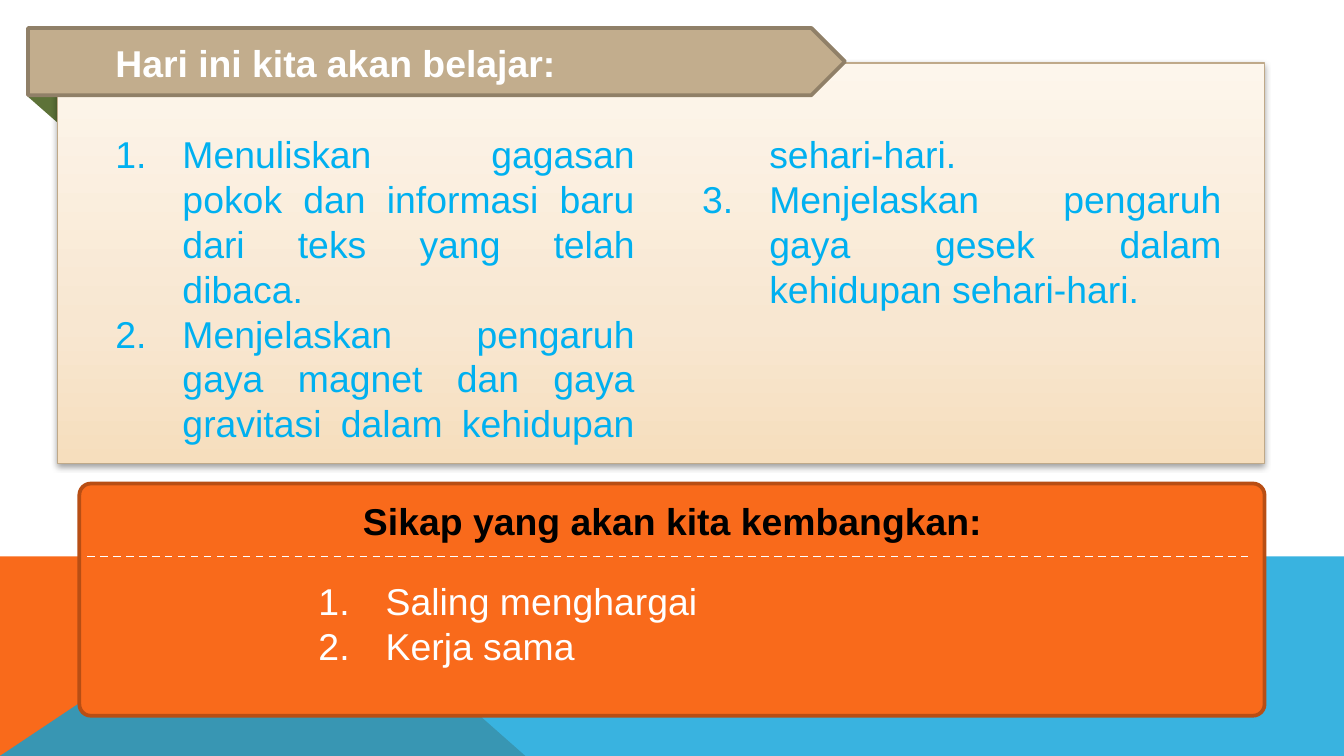
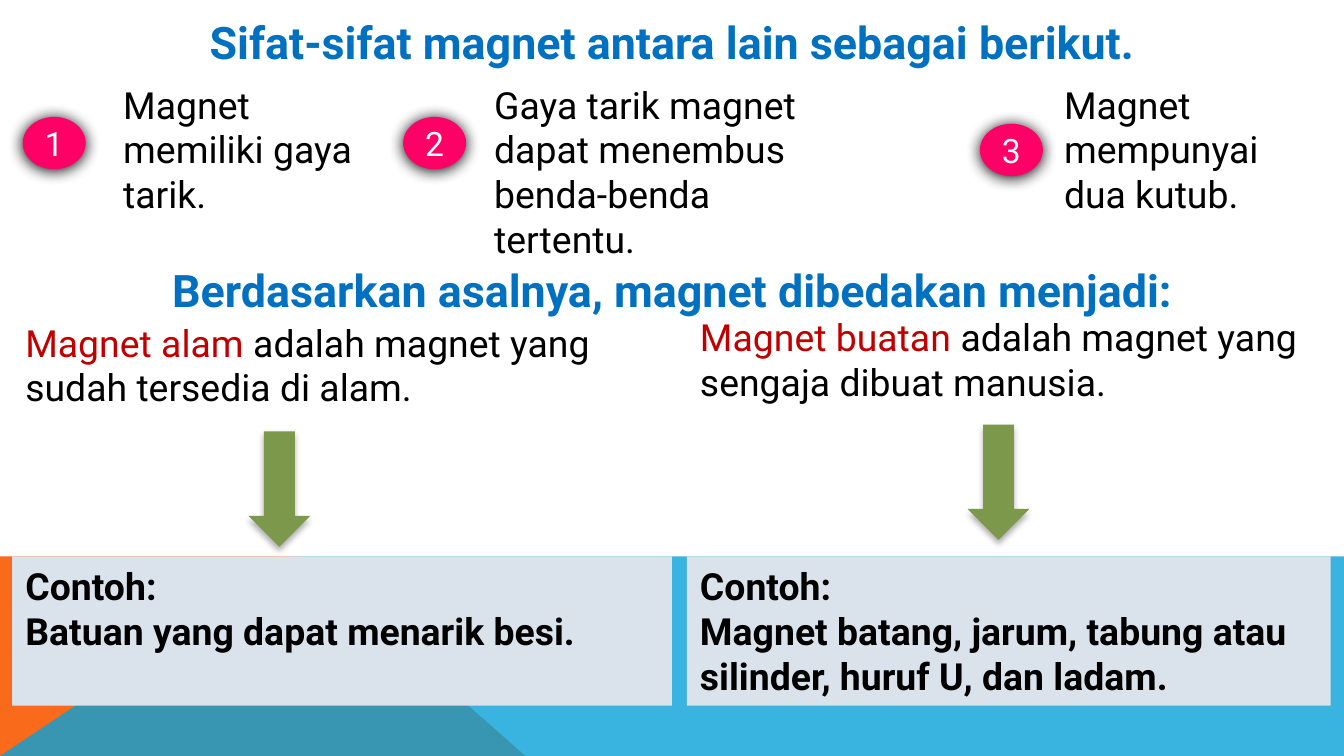
from dataclasses import dataclass
from typing import NamedTuple, Optional

from lxml import etree
from pptx import Presentation
from pptx.dml.color import RGBColor
from pptx.enum.dml import MSO_LINE
from pptx.enum.shapes import MSO_CONNECTOR, MSO_SHAPE
from pptx.enum.text import MSO_ANCHOR, MSO_AUTO_SIZE, PP_ALIGN
from pptx.oxml.ns import qn
from pptx.util import Cm, Pt

RECTANGLE, ROUNDED = MSO_SHAPE.RECTANGLE, MSO_SHAPE.ROUNDED_RECTANGLE
TRIANGLE, PENTAGON = MSO_SHAPE.ISOSCELES_TRIANGLE, MSO_SHAPE.PENTAGON
OVAL, ARROW = MSO_SHAPE.OVAL, MSO_SHAPE.RIGHT_ARROW
LEFT, CENTER, JUSTIFY = PP_ALIGN.LEFT, PP_ALIGN.CENTER, PP_ALIGN.JUSTIFY
TOP, MIDDLE = MSO_ANCHOR.TOP, MSO_ANCHOR.MIDDLE
GROW = MSO_AUTO_SIZE.SHAPE_TO_FIT_TEXT

COLORS = {
    "white": "FFFFFF", "black": "000000",
    "orange": "F96A1B", "orange edge": "B84E14", "sky": "08A1D9",
    "tan": "C2AD8D", "tan edge": "908068", "panel edge": "BFA989",
    "fold": "5D7238", "aqua": "00B0F0", "heading": "0070C0",
    "term": "C00000", "example": "DAE2EB", "badge": "FF0066", "arrow": "7C984A",
}
PANEL_STOPS = ((0, "F6DEBD"), (35, "F8E7D1"), (100, "FDF6EC"))

# Shared page measures, in centimetres
WIDTH, HEIGHT = 25.4, 14.29
BAND_TOP = 10.52
MARGIN, RIGHT_COLUMN = 0.23, 12.98


class Area(NamedTuple):
    left: float
    top: float
    width: float
    height: float


class Shadow(NamedTuple):
    opacity: int
    blur: float
    distance: float


@dataclass(frozen=True)
class TextStyle:
    font: str
    size: int
    color: str
    bold: bool = False
    align: PP_ALIGN = LEFT


@dataclass(frozen=True)
class Fact:
    number: str
    text: str
    area: Area
    badge_left: float
    badge_top: float


@dataclass(frozen=True)
class Kind:
    term: str
    meaning: str
    meaning_area: Area
    example: str
    example_area: Area
    arrow_left: float
    arrow_top: float


GOALS = TextStyle("Arial", 20, "aqua", align=JUSTIFY)
ATTITUDES = TextStyle("Arial", 20, "white")
GOALS_TITLE = TextStyle("Arial", 20, "white", True)
ATTITUDES_TITLE = TextStyle("Arial", 20, "black", True, CENTER)
HEADING = TextStyle("Roboto", 24, "heading", True, CENTER)
BODY = TextStyle("Roboto", 20, "black")
EXAMPLE = TextStyle("Roboto", 20, "black", True)
BADGE = TextStyle("Roboto", 18, "white", align=CENTER)

PANEL_SHADOW = Shadow(38, 3.1, 1.6)
BADGE_SHADOW = Shadow(100, 8.5, 1)
ARROW_SHADOW = Shadow(32, 3.5, 2.2)

FACTS = (
    Fact("1", "Magnet memiliki gaya tarik.", Area(2.08, 1.42, 5.08, 2.82), 0.43, 2.21),
    Fact("2", "Gaya tarik magnet dapat menembus benda-benda tertentu.",
         Area(9.09, 1.42, 7.39, 2.82), 7.62, 2.21),
    Fact("3", "Magnet mempunyai dua kutub.", Area(19.86, 1.42, 5.08, 2.59), 18.52, 2.34),
)
KINDS = (
    Kind("Magnet alam ", "adalah magnet yang sudah tersedia di alam.",
         Area(MARGIN, 5.92, 12.47, 1.96), "Batuan yang dapat menarik besi.",
         Area(MARGIN, BAND_TOP, 12.47, 2.82), 4.19, 8.66),
    Kind("Magnet buatan ", "adalah magnet yang sengaja dibuat manusia.",
         Area(RIGHT_COLUMN, 5.82, 11.79, 1.96),
         "Magnet batang, jarum, tabung atau silinder, huruf U, dan ladam.",
         Area(RIGHT_COLUMN, BAND_TOP, 12.17, 2.82), 17.78, 8.53),
)


def rgb(name: str) -> RGBColor:
    return RGBColor.from_string(COLORS[name])


def lengths(area: Area) -> list:
    return [Cm(value) for value in area]


def add_color(parent, value: str, opacity: int = 100) -> None:
    color = etree.SubElement(parent, qn("a:srgbClr"), val=value)
    if opacity < 100:
        etree.SubElement(color, qn("a:alpha"), val=str(opacity * 1000))


def add_shadow(shape, shadow: Shadow) -> None:
    effects = shape.element.spPr.find(qn("a:effectLst"))
    outer = etree.SubElement(
        effects, qn("a:outerShdw"), blurRad=str(Pt(shadow.blur)),
        dist=str(Pt(shadow.distance)), dir="5400000", rotWithShape="0")
    add_color(outer, COLORS["black"], shadow.opacity)


def add_box(page, kind: MSO_SHAPE, area: Area, fill: str, edge: Optional[str] = None,
            edge_width: float = 2, shadow: Optional[Shadow] = None, turn: int = 0):
    box = page.shapes.add_shape(kind, *lengths(area))
    box.rotation = turn
    box.shadow.inherit = False
    box.fill.solid()
    box.fill.fore_color.rgb = rgb(fill)
    if edge:
        box.line.color.rgb = rgb(edge)
        box.line.width = Pt(edge_width)
    else:
        box.line.fill.background()
    if shadow:
        add_shadow(box, shadow)
    return box


def style_span(span, style: TextStyle, color: str) -> None:
    span.font.name = style.font
    span.font.size = Pt(style.size)
    span.font.bold = style.bold
    span.font.color.rgb = rgb(color)


def write(box, lines: list[str], style: TextStyle, numbered: bool = False,
          wrap: bool = True, grow: bool = True) -> None:
    frame = box.text_frame
    frame.text = "\n".join(lines)
    frame.word_wrap = wrap
    frame.vertical_anchor = TOP
    if grow:
        frame.auto_size = GROW
    for para in frame.paragraphs:
        para.alignment = style.align
        if numbered:
            properties = para.runs[0].font and para.runs[0]._r.getparent().get_or_add_pPr()
            properties.set("marL", str(Cm(1.27)))
            properties.set("indent", str(-Cm(1.27)))
            etree.SubElement(properties, qn("a:buFont"), typeface="+mj-lt")
            etree.SubElement(properties, qn("a:buAutoNum"), type="arabicPeriod")
        for span in para.runs:
            style_span(span, style, style.color)


def add_text(page, area: Area, lines: list[str], style: TextStyle,
             numbered: bool = False, wrap: bool = True):
    box = page.shapes.add_textbox(*lengths(area))
    write(box, lines, style, numbered, wrap)
    return box


def add_band_part(page, points: list[tuple], fill: str, opacity: int = 100) -> None:
    corners = [(Cm(x), Cm(y)) for x, y in points]
    builder = page.shapes.build_freeform(*corners[0])
    builder.add_line_segments(corners[1:], close=True)
    part = builder.convert_to_shape()
    part.shadow.inherit = False
    part.fill.solid()
    part.fill.fore_color.rgb = rgb(fill)
    part.line.fill.background()
    if opacity < 100:
        color = part.element.spPr.find(qn("a:solidFill")).find(qn("a:srgbClr"))
        etree.SubElement(color, qn("a:alpha"), val=str(opacity * 1000))


def add_page(deck):
    page = deck.slides.add_slide(deck.slide_layouts[6])
    page.background.fill.solid()
    page.background.fill.fore_color.rgb = rgb("white")
    # Two-colour band along the bottom
    start, peak = (0, HEIGHT), (5.66, BAND_TOP)
    add_band_part(page, [start, (0, BAND_TOP), peak, (9.93, HEIGHT)], "orange")
    add_band_part(page, [start, peak, (WIDTH, BAND_TOP), (WIDTH, HEIGHT)], "sky", 80)
    return page


def fill_panel(panel) -> None:
    panel.fill.gradient()
    panel.fill.gradient_angle = 90
    stops = panel.element.spPr.find(qn("a:gradFill")).find(qn("a:gsLst"))
    for stop in list(stops):
        stops.remove(stop)
    for position, value in PANEL_STOPS:
        add_color(etree.SubElement(stops, qn("a:gs"), pos=str(position * 1000)), value)


def build_goals(deck) -> None:
    page = add_page(deck)

    # Learning goals in two columns
    add_box(page, TRIANGLE, Area(0.53, 1.83, 1.85, 0.81), "fold", turn=180)
    panel = add_box(page, RECTANGLE, Area(1.09, 1.19, 22.81, 7.57), "tan",
                    "panel edge", 0.75, PANEL_SHADOW)
    fill_panel(panel)
    goals = add_text(page, Area(1.93, 2.36, 21.41, 6.25), [
        "Menuliskan gagasan pokok dan informasi baru dari teks yang telah dibaca.",
        "Menjelaskan pengaruh gaya magnet dan gaya gravitasi dalam kehidupan sehari-hari.",
        "Menjelaskan pengaruh gaya gesek dalam kehidupan sehari-hari.",
    ], GOALS, numbered=True)
    body = goals.element.txBody.find(qn("a:bodyPr"))
    body.set("numCol", "2")
    body.set("spcCol", str(Cm(1.27)))
    add_box(page, PENTAGON, Area(0.53, 0.53, 15.44, 1.27), "tan", "tan edge")
    add_text(page, Area(1.93, 0.64, 8.89, 1.12), ["Hari ini kita akan belajar:"],
             GOALS_TITLE, wrap=False)

    # Attitudes
    card = add_box(page, ROUNDED, Area(1.5, 9.14, 22.4, 4.39), "orange", "orange edge")
    card.adjustments[0] = 0.05
    add_text(page, Area(5.77, 10.8, 14.6, 1.65), ["Saling menghargai", "Kerja sama"],
             ATTITUDES, numbered=True)
    add_text(page, Area(3.38, 9.3, 18.67, 1.12), ["Sikap yang akan kita kembangkan:"],
             ATTITUDES_TITLE)
    divider = page.shapes.add_connector(
        MSO_CONNECTOR.STRAIGHT, Cm(1.65), Cm(BAND_TOP), Cm(23.65), Cm(BAND_TOP))
    divider.line.color.rgb = rgb("white")
    divider.line.width = Pt(1)
    divider.line.dash_style = MSO_LINE.DASH
    etree.SubElement(divider.element.spPr, qn("a:effectLst"))


def build_magnets(deck) -> None:
    page = add_page(deck)

    # Headings
    for top, heading in ((0.15, "Sifat-sifat magnet antara lain sebagai berikut."),
                         (4.85, "Berdasarkan asalnya, magnet dibedakan menjadi:")):
        add_text(page, Area(MARGIN, top, 24.94, 1.27), [heading], HEADING)

    # Kinds of magnet with their examples
    for kind in KINDS:
        meaning = add_text(page, kind.meaning_area, [kind.term], BODY)
        para = meaning.text_frame.paragraphs[0]
        style_span(para.runs[0], BODY, "term")
        span = para.add_run()
        span.text = kind.meaning
        style_span(span, BODY, BODY.color)
        example = add_box(page, RECTANGLE, kind.example_area, "example")
        write(example, ["Contoh:", kind.example], EXAMPLE)
        add_box(page, ARROW, Area(kind.arrow_left, kind.arrow_top, 2.18, 1.17),
                "arrow", shadow=ARROW_SHADOW, turn=90)

    # Numbered properties
    for fact in FACTS:
        write(add_box(page, RECTANGLE, fact.area, "white"), [fact.text], BODY)
        badge = add_box(page, OVAL, Area(fact.badge_left, fact.badge_top, 1.19, 0.99),
                        "badge", shadow=BADGE_SHADOW)
        write(badge, [fact.number], BADGE, grow=False)
        frame = badge.text_frame
        frame.vertical_anchor = MIDDLE
        frame.margin_left = frame.margin_right = frame.margin_top = frame.margin_bottom = 0


def main() -> None:
    deck = Presentation()
    deck.slide_width, deck.slide_height = Cm(WIDTH), Cm(HEIGHT)
    build_goals(deck)
    build_magnets(deck)
    deck.save("out.pptx")


if __name__ == "__main__":
    main()
